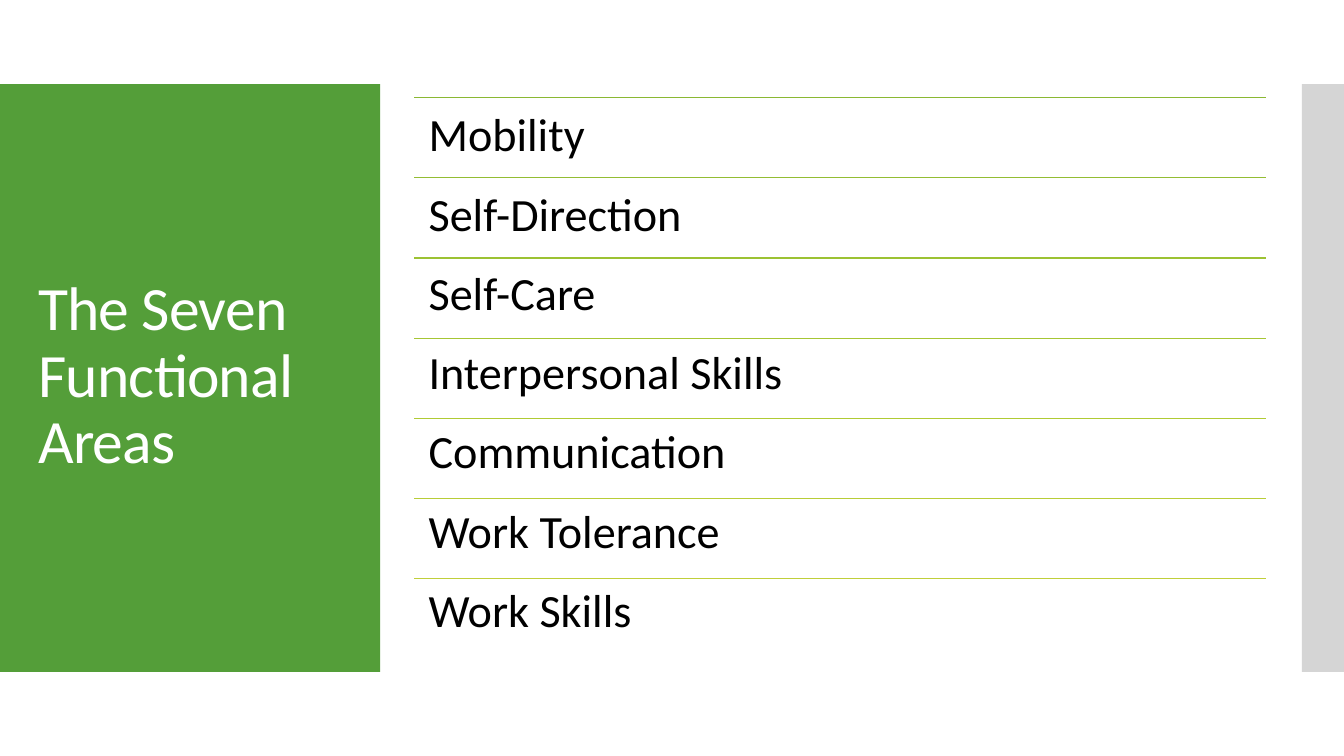
"""Build the slide that lists the seven functional areas."""
import pptx
import pptx.dml.color
import pptx.enum.shapes
import pptx.enum.text
import pptx.oxml.ns
import pptx.util
from lxml import etree

Cm, Pt = pptx.util.Cm, pptx.util.Pt
qn = pptx.oxml.ns.qn

AREAS = {
    "Mobility": "8AB833",
    "Self-Direction": "93BD33",
    "Self-Care": "9CC233",
    "Interpersonal Skills": "A6C634",
    "Communication": "B0CB34",
    "Work Tolerance": "B8CD37",
    "Work Skills": "C0CF3A",
}
LIST_LEFT, LIST_TOP, LIST_WIDTH, ROW_HEIGHT = 10.44, 2.46, 21.46, 2.02
PANEL_TOP, PANEL_HEIGHT = 2.12, 14.81


def rgb(hex_code):
    return pptx.dml.color.RGBColor.from_string(hex_code)


def write(holder, lines, size, color, anchor, inset=None, after=0, tracking=0):
    frame = holder.text_frame
    frame.text = "\n".join(lines)
    frame.word_wrap = True
    frame.auto_size = pptx.enum.text.MSO_AUTO_SIZE.NONE
    frame.vertical_anchor = anchor
    if inset is not None:
        frame.margin_left = frame.margin_right = Cm(inset)
        frame.margin_top = frame.margin_bottom = Cm(inset)
    for paragraph in frame.paragraphs:
        paragraph.alignment = pptx.enum.text.PP_ALIGN.LEFT
        paragraph.line_spacing = 0.9
        paragraph.space_before = Pt(0)
        paragraph.space_after = Pt(after)
        properties = paragraph._p.get_or_add_pPr()
        properties.set("marL", "0")
        properties.set("indent", "0")
        etree.SubElement(properties, qn("a:buNone"))
        for run in paragraph.runs:
            run.font.name = "Calibri"
            run.font.size = Pt(size)
            run.font.color.rgb = rgb(color)
            run._r.get_or_add_rPr().set("spc", str(round(tracking * 100)))


class SlideBuilder:
    def __init__(self, slide):
        self.slide = slide
        self.rule_width = Pt(0.85)

    def panel(self, left, width, color):
        shape = self.slide.shapes.add_shape(
            pptx.enum.shapes.MSO_SHAPE.RECTANGLE,
            Cm(left), Cm(PANEL_TOP), Cm(width), Cm(PANEL_HEIGHT))
        shape.shadow.inherit = False
        shape.fill.solid()
        shape.fill.fore_color.rgb = rgb(color)
        shape.line.fill.background()
        self.slide.shapes._spTree.insert(2, shape._element)

    def placeholder(self, index, left, top, width, height, lines, **style):
        holder = self.slide.placeholders[index]
        holder.left, holder.top = Cm(left), Cm(top)
        holder.width, holder.height = Cm(width), Cm(height)
        write(holder, lines, **style)

    def rule(self, left, top, width, color):
        line = self.slide.shapes.add_connector(
            pptx.enum.shapes.MSO_CONNECTOR.STRAIGHT,
            Cm(left), Cm(top), Cm(left + width), Cm(top))
        line.line.color.rgb = rgb(color)
        line.line.width = self.rule_width
        etree.SubElement(line._element.spPr, qn("a:effectLst"))


def main():
    deck = pptx.Presentation()
    deck.slide_width, deck.slide_height = Cm(33.87), Cm(19.05)
    builder = SlideBuilder(deck.slides.add_slide(deck.slide_layouts[1]))
    anchors = pptx.enum.text.MSO_ANCHOR

    builder.panel(0, 9.58, "549E39")
    builder.panel(32.81, 1.06, "D5D5D5")
    builder.placeholder(0, 0.71, 3.12, 8.18, 12.78,
                        ["The Seven Functional Areas"], size=44,
                        color="FFFFFF", anchor=anchors.MIDDLE, tracking=-0.6)
    builder.placeholder(1, LIST_LEFT, LIST_TOP, LIST_WIDTH,
                        ROW_HEIGHT * len(AREAS), AREAS, size=33,
                        color="000000", anchor=anchors.TOP, inset=0.36, after=21)
    for row, color in enumerate(AREAS.values()):
        builder.rule(LIST_LEFT, LIST_TOP + row * ROW_HEIGHT, LIST_WIDTH, color)

    deck.save("out.pptx")


if __name__ == "__main__":
    main()
